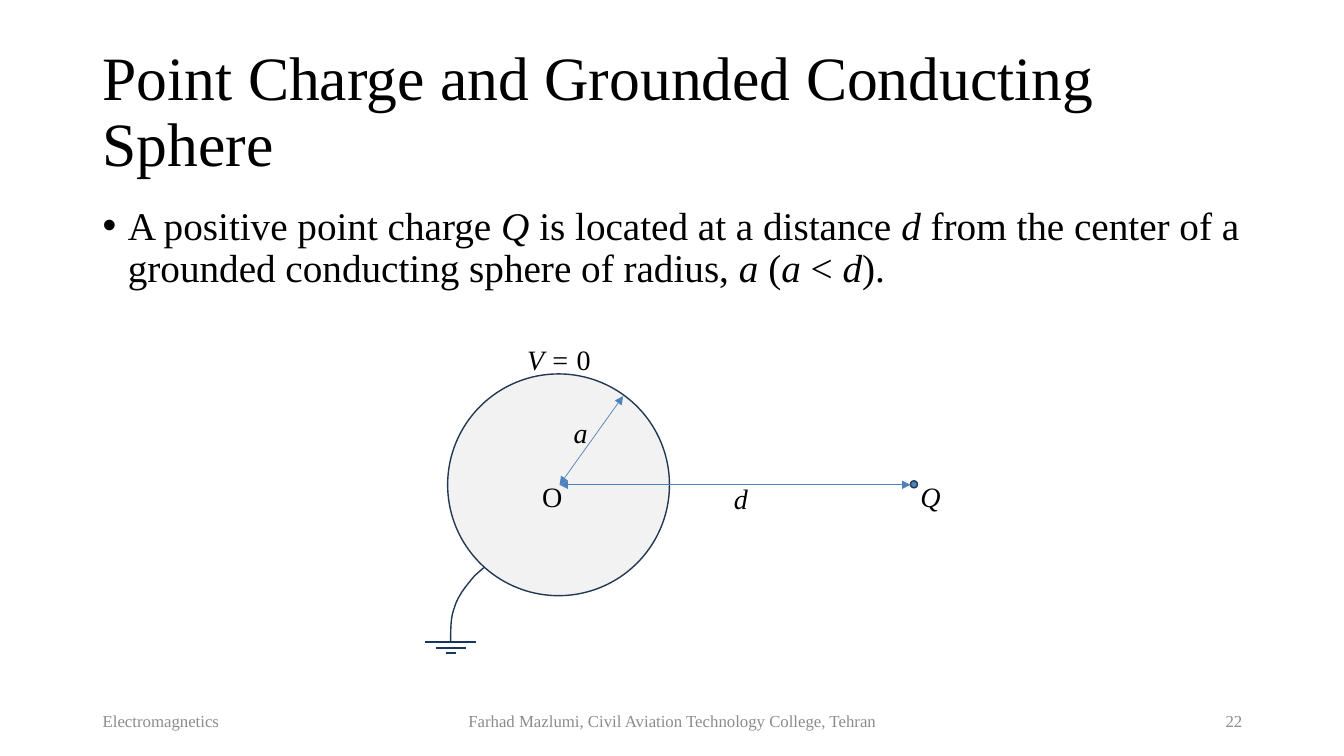
"""Build a slide on a point charge near a grounded conducting sphere."""
from lxml.etree import SubElement
from pptx import Presentation
from pptx.dml.color import RGBColor
from pptx.enum.shapes import MSO_CONNECTOR, MSO_SHAPE
from pptx.enum.text import MSO_ANCHOR as Anchor, PP_ALIGN as Align
from pptx.oxml import parse_xml
from pptx.oxml.ns import nsdecls, qn
from pptx.util import Inches, Pt

OUTLINE, ACCENT, GROUND = "233953", "4F81BD", "17375E"
CENTER = (5.55, 4.81)


def add_text(place, text, size, color="000000", anchor=Anchor.TOP, align=Align.LEFT):
    """Add a text box; parts between asterisks are italic."""
    box = page.shapes.add_textbox(*map(Inches, place))
    box.text_frame.word_wrap = True
    box.text_frame.vertical_anchor = anchor
    para = box.text_frame.paragraphs[0]
    para.alignment = align
    para.font.name = "Times New Roman"
    para.font.size = Pt(size)
    para.font.color.rgb = RGBColor.from_string(color)
    for index, part in enumerate(text.split("*")):
        if part:
            span = para.add_run()
            span.text = part
            span.font.italic = index % 2 == 1
    return para


def add_line(start, end, color, width):
    """Add a straight connector without a shadow."""
    line = page.shapes.add_connector(
        MSO_CONNECTOR.STRAIGHT, *map(Inches, (*start, *end)))
    line.line.color.rgb = RGBColor.from_string(color)
    line.line.width = Pt(width)
    SubElement(line._element.spPr, qn("a:effectLst"))
    return line


deck = Presentation()
deck.slide_width, deck.slide_height = Inches(13.33), Inches(7.5)
page = deck.slides.add_slide(deck.slide_layouts[6])

title = add_text((0.92, 0.4, 11.5, 1.45), "Point Charge and Grounded Conducting Sphere",
                 44, anchor=Anchor.MIDDLE)
title.line_spacing = 0.9

body = add_text(
    (0.92, 2, 11.5, 1.01),
    "A positive point charge *Q* is located at a distance *d* from the center of a "
    "grounded conducting sphere of radius, *a* (*a* < *d*).", 28)
body.line_spacing = 0.9
body.space_before = Pt(10)
body_format = body._p.get_or_add_pPr()
body_format.set("marL", str(Inches(0.25)))
body_format.set("indent", str(Inches(-0.25)))
for bullet in ('<a:buFont %s typeface="Arial"/>', '<a:buChar %s char="•"/>'):
    body_format[-1].addprevious(parse_xml(bullet % nsdecls("a")))

for left, width, text, align in (
    (0.92, 3, "Electromagnetics", Align.LEFT),
    (4.42, 4.5, "Farhad Mazlumi, Civil Aviation Technology College, Tehran", Align.CENTER),
    (9.42, 3, "22", Align.RIGHT),
):
    add_text((left, 6.95, width, 0.4), text, 12, "8C8C8C", Anchor.MIDDLE, align)

wire_curves = (
    ((4.8, 5.63), (4.76, 5.67), (4.71, 5.7), (4.66, 5.77)),
    ((4.66, 5.77), (4.61, 5.83), (4.54, 5.92), (4.51, 6.02)),
    ((4.51, 6.02), (4.47, 6.12), (4.47, 6.23), (4.47, 6.37)),
)
steps = 8
wire_points = []
for curve in wire_curves:
    for step in range(1, steps + 1):
        t = step / steps
        weights = ((1 - t) ** 3, 3 * t * (1 - t) ** 2, 3 * t ** 2 * (1 - t), t ** 3)
        wire_points.append(tuple(
            Inches(sum(weight * point[axis] for weight, point in zip(weights, curve)))
            for axis in (0, 1)))
builder = page.shapes.build_freeform(*map(Inches, wire_curves[0][0]))
builder.add_line_segments(wire_points, close=False)
wire = builder.convert_to_shape()
wire.fill.background()

sphere = page.shapes.add_shape(
    MSO_SHAPE.OVAL, *map(Inches, (4.44, 3.71, 2.2, 2.2)))
charge = page.shapes.add_shape(
    MSO_SHAPE.OVAL, *map(Inches, (9.03, 4.77, 0.07, 0.07)))
for shape, color in ((sphere, "F2F2F2"), (charge, ACCENT)):
    shape.fill.solid()
    shape.fill.fore_color.rgb = RGBColor.from_string(color)
for shape in (wire, sphere, charge):
    shape.shadow.inherit = False
    shape.line.color.rgb = RGBColor.from_string(OUTLINE)
    shape.line.width = Pt(1)

for start in ((9.03, 4.81), (6.18, 3.93)):
    arrow = add_line(start, CENTER, ACCENT, 0.5)
    outline = arrow.line._get_or_add_ln()
    for end in ("a:headEnd", "a:tailEnd"):
        SubElement(outline, qn(end), type="triangle")

for top, half_width in ((6.37, 0.25), (6.43, 0.15), (6.48, 0.05)):
    add_line((4.47 - half_width, top), (4.47 + half_width, top), GROUND, 1)

for left, top, width, text in (
    (5.13, 3.35, 0.97, "*V = *0"),
    (5.59, 4.07, 0.44, "*a*"),
    (5.28, 4.71, 0.44, "O"),
    (7.18, 4.73, 0.44, "*d*"),
    (9.03, 4.71, 0.44, "*Q*"),
):
    add_text((left, top, width, 0.44), text, 20)

deck.save("out.pptx")
